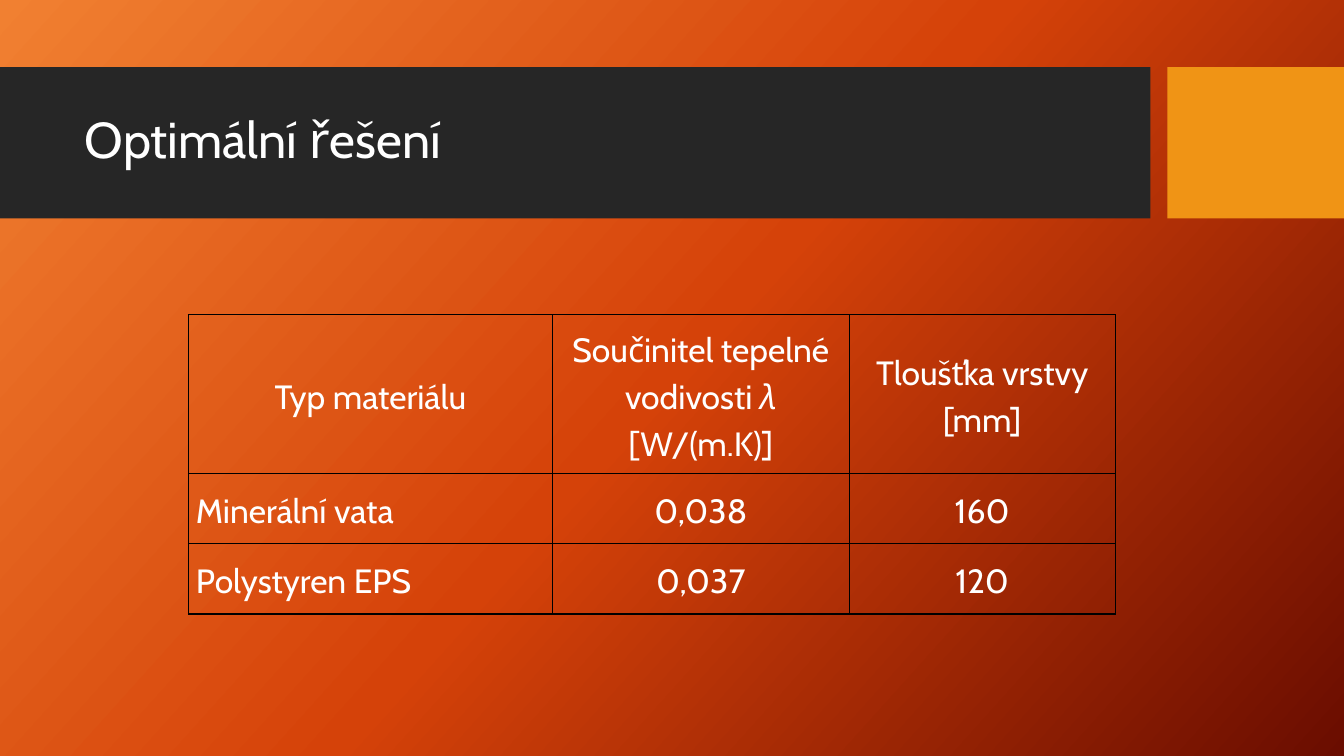
"""Build the slide that compares the chosen insulation materials."""
from copy import deepcopy
from dataclasses import dataclass

from lxml import etree
from pptx import Presentation
from pptx.dml.color import RGBColor
from pptx.enum.shapes import MSO_SHAPE
from pptx.enum.text import MSO_ANCHOR, MSO_AUTO_SIZE, PP_ALIGN
from pptx.oxml.ns import qn
from pptx.util import Pt

RECTANGLE = MSO_SHAPE.RECTANGLE
MIDDLE = MSO_ANCHOR.MIDDLE
NO_FIT = MSO_AUTO_SIZE.NONE
LEFT, CENTER = PP_ALIGN.LEFT, PP_ALIGN.CENTER
TITLE_ONLY = 5
SYMBOL = "λ"


@dataclass(frozen=True)
class Theme:
    """Colours, font and type sizes of the slide."""
    gradient: tuple = ((0, "F18031"), (0.5, "D54209"), (1, "6A0D00"))
    gradient_angle: int = 42
    band: str = "262626"
    accent: str = "F09415"
    text: str = "FFFFFF"
    border: str = "000000"
    font: str = "Cabin"
    title_size: int = 36
    table_size: int = 24


THEME = Theme()
COLUMN_WIDTHS = (260, 212, 190)
ROW_HEIGHTS = (113.6, 50.1, 50.1)
ROWS = (
    ("Typ materiálu", "Součinitel tepelné vodivosti λ\n[W/(m.K)]", "Tloušťka vrstvy [mm]"),
    ("Minerální vata", "0,038", "160"),
    ("Polystyren EPS", "0,037", "120"),
)


def color(code):
    """Turn a hex code into a colour."""
    return RGBColor.from_string(code)


def paint_background(page):
    """Fill the page with the three-stop diagonal gradient."""
    fill = page.background.fill
    fill.gradient()
    fill.gradient_angle = 360 - THEME.gradient_angle
    stop_list = page.element.find(".//" + qn("a:gsLst"))
    stop_list.append(deepcopy(stop_list[-1]))
    for stop, (position, code) in zip(fill.gradient_stops, THEME.gradient):
        stop.position = position
        stop.color.rgb = color(code)


def add_band(page, left, width, code):
    """Draw one flat block of the title strip."""
    band = page.shapes.add_shape(RECTANGLE, Pt(left), Pt(48), Pt(width), Pt(108))
    band.shadow.inherit = False
    band.fill.solid()
    band.fill.fore_color.rgb = color(code)
    band.line.fill.background()


def format_paragraph(para, size, align, spacing):
    """Apply the shared text look to a paragraph and its runs."""
    para.alignment = align
    para.line_spacing = spacing
    for span in para.runs:
        span.font.name = THEME.font
        span.font.size = Pt(size)
        span.font.color.rgb = color(THEME.text)
        span.font.italic = span.text == SYMBOL


def set_title(page, text):
    """Place the title in front of the strip."""
    title = page.shapes.title
    page.shapes.element.append(title.element)
    title.left, title.top, title.width, title.height = Pt(53.3), Pt(59), Pt(756.7), Pt(85)
    frame = title.text_frame
    frame.text = text
    frame.auto_size = NO_FIT
    frame.vertical_anchor = MIDDLE
    format_paragraph(frame.paragraphs[0], THEME.title_size, LEFT, 0.9)


def add_borders(cell):
    """Draw a thin line on all four sides of a cell."""
    properties = cell._tc.get_or_add_tcPr()
    for side in ("a:lnL", "a:lnR", "a:lnT", "a:lnB"):
        line = etree.SubElement(properties, qn(side), w=str(Pt(1)))
        fill = etree.SubElement(line, qn("a:solidFill"))
        etree.SubElement(fill, qn("a:srgbClr"), val=THEME.border)


def fill_cell(cell, text, align):
    """Write and format one table cell."""
    add_borders(cell)
    cell.fill.background()
    cell.vertical_anchor = MIDDLE
    cell.margin_left = cell.margin_right = Pt(5.4)
    cell.margin_top = cell.margin_bottom = 0
    cell.text_frame.text = text
    for para in cell.text_frame.paragraphs:
        if para.text.endswith(SYMBOL):
            para.text = para.text.removesuffix(SYMBOL)
            para.add_run().text = SYMBOL
        format_paragraph(para, THEME.table_size, align, 1.15)


def add_material_table(page):
    """Add the table of materials."""
    table = page.shapes.add_table(
        len(ROWS), len(COLUMN_WIDTHS), Pt(134.6), Pt(224.8),
        Pt(sum(COLUMN_WIDTHS)), Pt(sum(ROW_HEIGHTS))).table
    table.first_row = table.horz_banding = False
    for column, width in zip(table.columns, COLUMN_WIDTHS):
        column.width = Pt(width)
    for row, height in zip(table.rows, ROW_HEIGHTS):
        row.height = Pt(height)
    for row_index, texts in enumerate(ROWS):
        for column_index, text in enumerate(texts):
            align = LEFT if row_index and not column_index else CENTER
            fill_cell(table.cell(row_index, column_index), text, align)


def main():
    """Build and save the deck."""
    deck = Presentation()
    deck.slide_width, deck.slide_height = Pt(960), Pt(540)
    page = deck.slides.add_slide(deck.slide_layouts[TITLE_ONLY])
    paint_background(page)
    add_band(page, 0, 821.8, THEME.band)
    add_band(page, 833.8, 126.2, THEME.accent)
    set_title(page, "Optimální řešení")
    add_material_table(page)
    deck.save("out.pptx")


if __name__ == "__main__":
    main()
